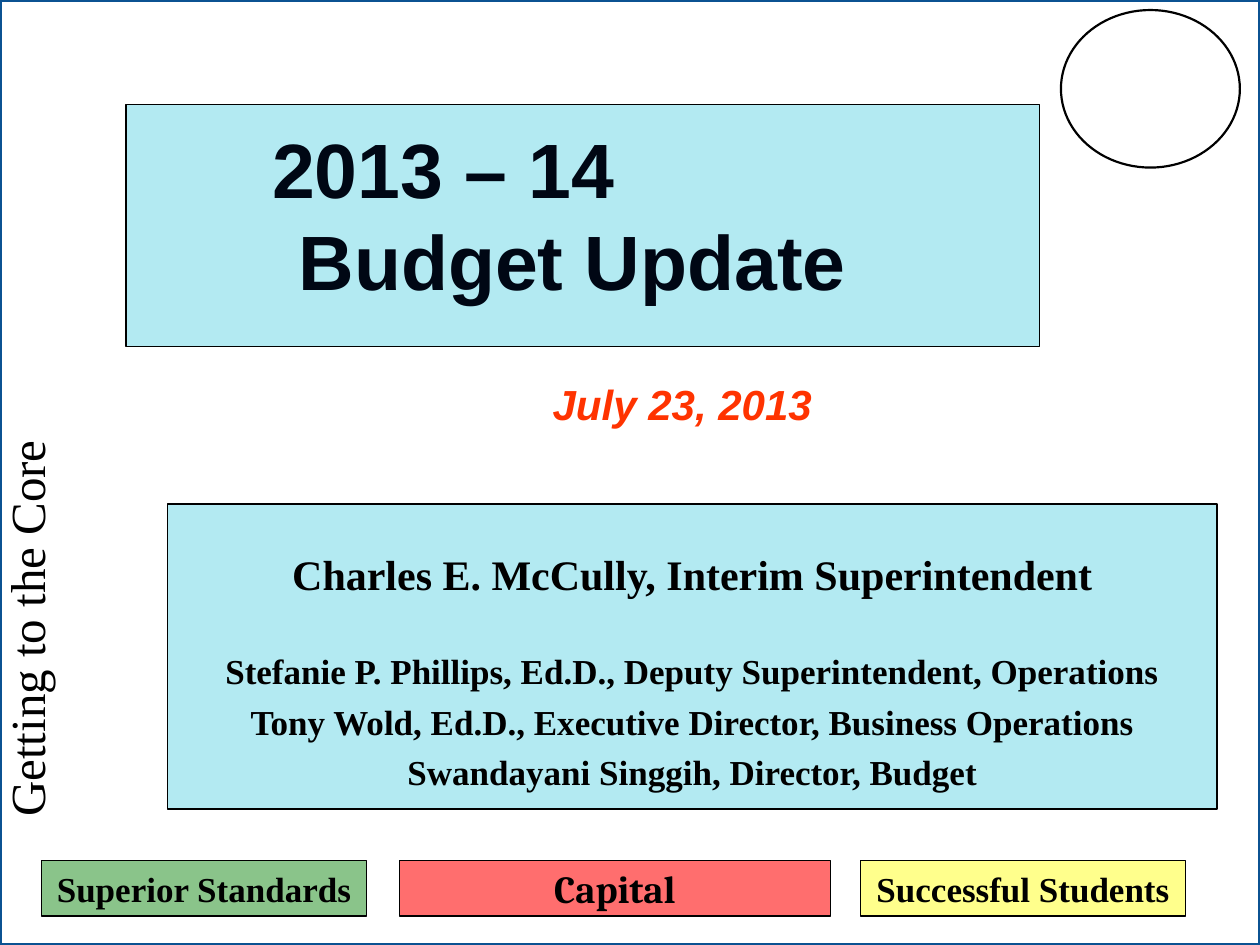
from lxml import etree
from pptx import Presentation
from pptx.dml.color import RGBColor
from pptx.enum.shapes import MSO_SHAPE
from pptx.enum.text import MSO_ANCHOR, MSO_AUTO_SIZE, PP_ALIGN
from pptx.oxml.ns import qn
from pptx.util import Inches, Pt

RECT, OVAL = MSO_SHAPE.RECTANGLE, MSO_SHAPE.OVAL
LEFT, CENTER = PP_ALIGN.LEFT, PP_ALIGN.CENTER
TOP, MIDDLE = MSO_ANCHOR.TOP, MSO_ANCHOR.MIDDLE
NO_FIT = MSO_AUTO_SIZE.NONE

BLACK = RGBColor(0x00, 0x00, 0x00)
WHITE = RGBColor(0xFF, 0xFF, 0xFF)
FRAME_BLUE = RGBColor(0x0B, 0x52, 0x92)
PALE_BLUE = RGBColor(0xB3, 0xEA, 0xF2)
NAVY = RGBColor(0x00, 0x07, 0x14)
ORANGE = RGBColor(0xFF, 0x33, 0x00)
GREEN = RGBColor(0x00, 0x80, 0x00)
RED = RGBColor(0xFF, 0x00, 0x00)
YELLOW = RGBColor(0xFF, 0xFF, 0x05)
SERIF, SANS = "Times New Roman", "Arial"

# text, left indent in inches
TITLE_LINES = [("2013 – 14", 1.06), ("Budget Update", 1.27)]
# text, size, space before in points
PRESENTERS = [
    ("Charles E. McCully, Interim Superintendent", 24, 0),
    ("Stefanie P. Phillips, Ed.D., Deputy Superintendent, Operations", 20, 29),
    ("Tony Wold, Ed.D., Executive Director, Business Operations", 20, 5),
    ("Swandayani Singgih, Director, Budget", 20, 5),
]
# text, font, size, left, width, fill, opacity in percent
BANNERS = [
    ("Superior Standards", SERIF, 20, 0.33, 2.58, GREEN, 46),
    ("Capital", "Cambria", 22, 3.17, 3.42, RED, 57),
    ("Successful Students", SERIF, 20, 6.83, 2.58, YELLOW, 46),
]


def style_paragraph(p, text, font, size, color=BLACK, bold=True, italic=False,
                    align=CENTER):
    p.text = text
    p.alignment = align
    f = p.runs[0].font
    f.name, f.size, f.bold, f.italic = font, Pt(size), bold, italic
    f.color.rgb = color


def set_outline(s, color, width):
    s.line.color.rgb = color
    s.line.width = Pt(width)


def add_outlined_shape(slide, kind, box, fill=None, line=BLACK, width=0.75):
    s = slide.shapes.add_shape(kind, *map(Inches, box))
    s.shadow.inherit = False
    if fill is None:
        s.fill.background()
    else:
        s.fill.solid()
        s.fill.fore_color.rgb = fill
    set_outline(s, line, width)
    return s


def set_opacity(s, percent):
    color = s.fill._xPr.find(qn("a:solidFill"))[0]
    etree.SubElement(color, qn("a:alpha")).set("val", str(percent * 1000))


def add_label(slide, box, text, font, size, **style):
    s = slide.shapes.add_textbox(*map(Inches, box))
    s.text_frame.word_wrap = True
    style_paragraph(s.text_frame.paragraphs[0], text, font, size, **style)
    return s


def place_panel(ph, box, top_inset, lines):
    """Turn a placeholder into a pale blue panel with one paragraph per line."""
    ph.left, ph.top, ph.width, ph.height = map(Inches, box)
    ph.fill.solid()
    ph.fill.fore_color.rgb = PALE_BLUE
    set_outline(ph, BLACK, 0.75)
    tf = ph.text_frame
    tf.auto_size = NO_FIT
    tf.word_wrap = True
    tf.vertical_anchor = TOP
    tf.margin_top = Inches(top_inset)
    tf.text = "\n".join(lines)
    return tf.paragraphs


def add_title(slide):
    paragraphs = place_panel(slide.shapes.title, (1, 0.83, 7.25, 1.92), 0.14,
                             [text for text, _ in TITLE_LINES])
    for p, (text, indent) in zip(paragraphs, TITLE_LINES):
        style_paragraph(p, text, SANS, 44, NAVY, align=LEFT)
        p.line_spacing = Pt(52.5)
        p._p.get_or_add_pPr().set("marL", str(Inches(indent)))


def add_presenters(slide):
    paragraphs = place_panel(slide.placeholders[1], (1.33, 4, 8.33, 2.42), 0.35,
                             [text for text, _, _ in PRESENTERS])
    for p, (text, size, before) in zip(paragraphs, PRESENTERS):
        style_paragraph(p, text, SERIF, size)
        p.space_before = Pt(before)


def add_banner(slide, text, font, size, left, width, fill, opacity):
    s = add_outlined_shape(slide, RECT, (left, 6.83, width, 0.44), fill)
    set_opacity(s, opacity)
    tf = s.text_frame
    tf.vertical_anchor = MIDDLE
    style_paragraph(tf.paragraphs[0], text, font, size)


def main():
    prs = Presentation()
    prs.slide_width, prs.slide_height = Inches(10), Inches(7.5)
    slide = prs.slides.add_slide(prs.slide_layouts[0])

    add_outlined_shape(slide, RECT, (0, 0, 10, 7.5), line=FRAME_BLUE, width=2)
    add_outlined_shape(slide, OVAL, (8.42, 0.08, 1.42, 1.25), WHITE, width=1.25)
    motto = add_label(slide, (-1.27, 4.35, 3.42, 1.04), "Getting to the Core",
                      SERIF, 28, bold=False, align=LEFT)
    motto.rotation = 270

    add_title(slide)
    date = add_label(slide, (1.5, 3, 7.83, 0.48), "July 23, 2013", SANS, 24,
                     color=ORANGE, italic=True)
    date.text_frame.paragraphs[0].line_spacing = 0.9
    add_presenters(slide)
    for banner in BANNERS:
        add_banner(slide, *banner)

    prs.save("out.pptx")


if __name__ == "__main__":
    main()
